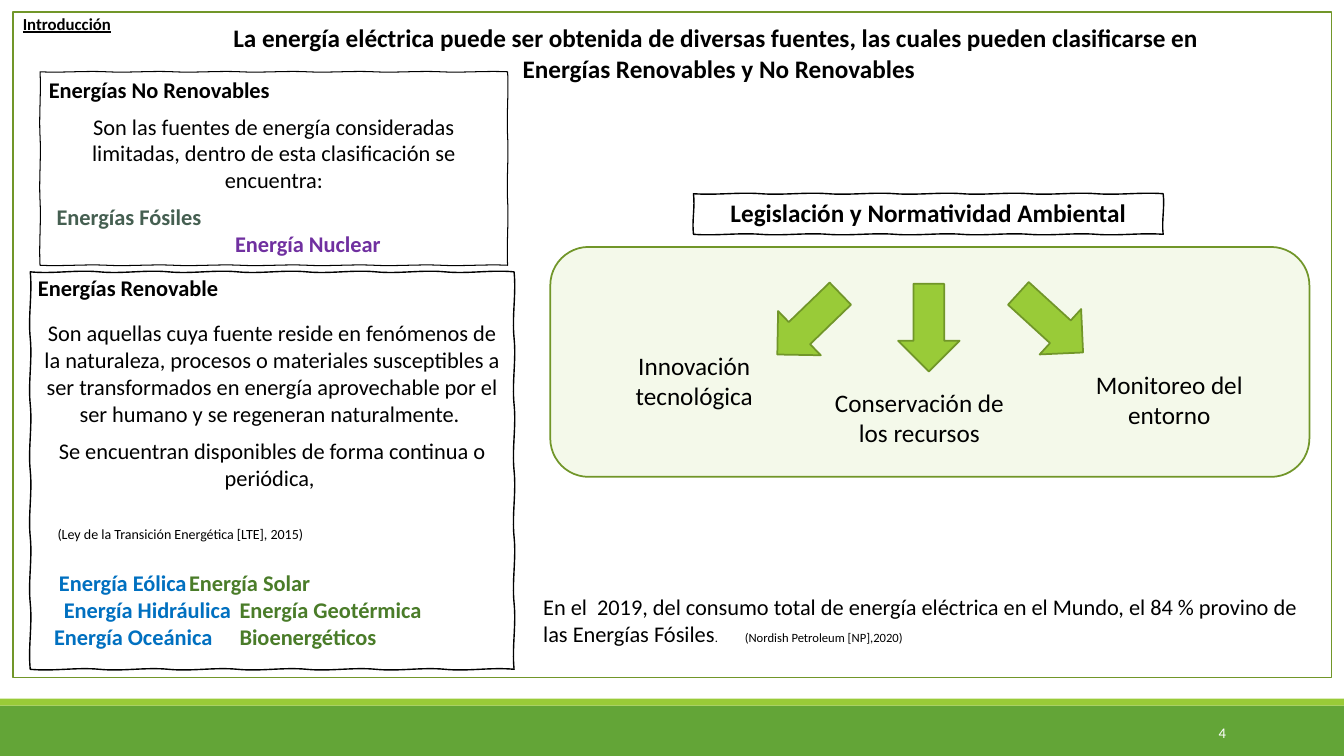
import math

from lxml import etree
from pptx import Presentation
from pptx import util as u
from pptx.dml.color import RGBColor
from pptx.enum import shapes, text
from pptx.oxml.ns import qn

Kind = shapes.MSO_SHAPE
Align = text.PP_ALIGN
LIME, OLIVE, GREEN = "99CB38", "719629", "63A537"
BLUE, FOREST, PURPLE, SLATE = "0070C0", "4A7C29", "7030A0", "455F51"
BLACK, WHITE = "000000", "FFFFFF"


def rgb(value):
    return RGBColor.from_string(value)


def style(shape, fill=None, line=None, weight=1.25, opacity=None):
    shape.shadow.inherit = False
    if fill:
        shape.fill.solid()
        shape.fill.fore_color.rgb = rgb(fill)
    else:
        shape.fill.background()
    if opacity is not None:
        tone = shape.fill._xPr.find(f".//{qn('a:srgbClr')}")
        etree.SubElement(tone, qn("a:alpha"), val=str(opacity * 1000))
    if line:
        shape.line.color.rgb = rgb(line)
        shape.line.width = u.Pt(weight)
    else:
        shape.line.fill.background()


def add_preset(page, kind, place, turn=0, **look):
    shape = page.shapes.add_shape(kind, *map(u.Pt, place))
    shape.rotation = turn
    style(shape, **look)
    return shape


def bend_lines(shape):
    """Turn every three straight segments into one cubic curve."""
    lines = list(shape._element.iter(qn("a:lnTo")))
    for first, second, third in zip(lines[::3], lines[1::3], lines[2::3]):
        curve = etree.Element(qn("a:cubicBezTo"))
        first.addprevious(curve)
        for segment in (first, second, third):
            curve.append(segment[0])
            segment.getparent().remove(segment)


def add_sketch(page, place, wobble, weight):
    """Draw a rectangle whose sides waver like a hand-drawn line."""
    left, top, width, height = place
    right, bottom = left + width, top + height
    corners = [(left, top), (right, top), (right, bottom), (left, bottom)]
    points = []
    for (x1, y1), (x2, y2) in zip(corners, corners[1:] + corners[:1]):
        length = math.hypot(x2 - x1, y2 - y1)
        steps = 3 * max(1, round(length / 48))
        for step in range(1, steps + 1):
            part = step / steps
            shift = (0, wobble, -wobble)[step % 3]
            x = x1 + (x2 - x1) * part + shift * (y2 - y1) / length
            y = y1 + (y2 - y1) * part + shift * (x2 - x1) / length
            points.append((u.Pt(x), u.Pt(y)))
    builder = page.shapes.build_freeform(u.Pt(left), u.Pt(top))
    builder.add_line_segments(points, close=True)
    shape = builder.convert_to_shape()
    bend_lines(shape)
    style(shape, line=BLACK, weight=weight)
    return prepare_text(shape)


def add_text_box(page, place, anchor=text.MSO_ANCHOR.TOP):
    return prepare_text(page.shapes.add_textbox(*map(u.Pt, place)), anchor)


def prepare_text(shape, anchor=text.MSO_ANCHOR.TOP):
    frame = shape.text_frame
    frame.word_wrap = True
    frame.vertical_anchor = anchor
    return frame


def add_span(para, words, size=16, color=BLACK, bold=False, underline=False):
    span = para.add_run()
    span.text = words
    font = span.font
    font.name, font.size, font.bold = "Calibri", u.Pt(size), bold
    font.underline = underline
    font.color.rgb = rgb(color)


def write(frame, words, align=Align.LEFT, before=0, indent=0, tab=None,
          tab_side="l", **font):
    """Add a paragraph, filling the empty first one before making more."""
    para = frame.paragraphs[0]
    if para.runs:
        para = frame.add_paragraph()
    para.alignment = align
    para.space_before = u.Pt(before)
    settings = para._p.get_or_add_pPr()
    settings.set("marL", "0")
    settings.set("indent", str(u.Pt(indent)))
    if tab:
        stops = etree.SubElement(settings, qn("a:tabLst"))
        etree.SubElement(stops, qn("a:tab"), pos=str(u.Pt(tab)), algn=tab_side)
    add_span(para, words, **font)
    return para


def add_background(page):
    add_preset(page, Kind.RECTANGLE, (0, 504, 960, 36), fill=GREEN)
    add_preset(page, Kind.RECTANGLE, (0, 499, 960, 5), fill=LIME)
    add_preset(page, Kind.RECTANGLE, (9.2, 8.8, 941.8, 475.2),
               fill=WHITE, line=OLIVE)


def add_headings(page):
    write(add_text_box(page, (9.2, 6.2, 239.8, 21.6)), "Introducción",
          size=12, bold=True, underline=True)
    title = prepare_text(
        add_preset(page, Kind.RECTANGLE, (152.6, 12.7, 717.8, 51.1)))
    for line in ("La energía eléctrica puede ser obtenida de diversas fuentes, "
                 "las cuales pueden clasificarse en",
                 " Energías Renovables y No Renovables"):
        write(title, line, align=Align.CENTER, size=18, bold=True)


def add_non_renewables(page):
    frame = add_sketch(page, (28.6, 51.3, 334, 138.2), 0.8, 0.75)
    write(frame, "Energías No Renovables", bold=True)
    write(frame, "Son las fuentes de energía consideradas limitadas, dentro "
          "de esta clasificación se encuentra:", align=Align.CENTER, before=7.3)
    write(frame, "Energías Fósiles", before=7.3, indent=5.5,
          color=SLATE, bold=True)
    write(frame, "Energía Nuclear", indent=133, color=PURPLE, bold=True)


def add_renewables(page):
    frame = add_sketch(page, (21.6, 194.2, 345.6, 283.9), 1.6, 1)
    write(frame, "Energías Renovable", bold=True)
    write(frame, "Son aquellas cuya fuente reside en fenómenos de la "
          "naturaleza, procesos o materiales susceptibles a ser transformados "
          "en energía aprovechable por el ser humano y se regeneran "
          "naturalmente. ", align=Align.CENTER, before=12.8)
    write(frame, "Se encuentran disponibles de forma continua o periódica, ",
          align=Align.CENTER, before=7.3)
    write(frame, "(Ley de la Transición Energética [LTE], 2015)",
          before=24.4, indent=14, size=10)
    rows = [("Energía Eólica", 15, "Energía Solar", 178, 19.5),
            ("Energía Hidráulica", 18.5, "Energía Geotérmica", 181, 0),
            ("Energía Oceánica", 11.5, "Bioenergéticos", 186, 0)]
    for first, indent, second, tab, before in rows:
        para = write(frame, first + "\t", before=before, indent=indent,
                     tab=tab, color=BLUE, bold=True)
        add_span(para, second, color=FOREST, bold=True)


def add_legislation(page):
    add_preset(page, Kind.ROUNDED_RECTANGLE, (393.1, 176.4, 542.2, 164.2),
               fill=LIME, line=OLIVE, opacity=10)
    branches = [("Innovación tecnológica", 424.6, 246.5, 555.8, 200.2, 46),
                ("Conservación de los recursos", 585.4, 272.9, 641.5, 202.8, 0),
                ("Monitoreo del entorno", 763.9, 259.9, 728.6, 199.4, 312.4)]
    for caption, left, top, arrow_left, arrow_top, turn in branches:
        add_preset(page, Kind.DOWN_ARROW, (arrow_left, arrow_top, 43.9, 62.6),
                   turn, fill=LIME, line=OLIVE)
        write(add_text_box(page, (left, top, 142.6, 51.1)), caption,
              align=Align.CENTER, size=18)
    heading = add_sketch(page, (495.4, 138.4, 335.5, 29), 1.2, 1)
    write(heading, "Legislación y Normatividad Ambiental",
          align=Align.CENTER, size=18, bold=True)


def add_closing(page):
    frame = add_text_box(page, (380.9, 420.5, 565.2, 46.1))
    para = write(frame, "En el  2019, del consumo total de energía eléctrica "
                 "en el Mundo, el 84 % provino de las Energías Fósiles",
                 tab=536, tab_side="r")
    add_span(para, ".\t(Nordish Petroleum [NP],2020)", size=9)
    number = add_text_box(page, (779.8, 508.6, 103, 28.8),
                          text.MSO_ANCHOR.MIDDLE)
    write(number, "4", align=Align.RIGHT, size=10.5, color=WHITE)


def main():
    deck = Presentation()
    deck.slide_width, deck.slide_height = u.Pt(960), u.Pt(540)
    page = deck.slides.add_slide(deck.slide_layouts[6])
    add_background(page)
    add_headings(page)
    add_non_renewables(page)
    add_renewables(page)
    add_legislation(page)
    add_closing(page)
    deck.save("out.pptx")


if __name__ == "__main__":
    main()
